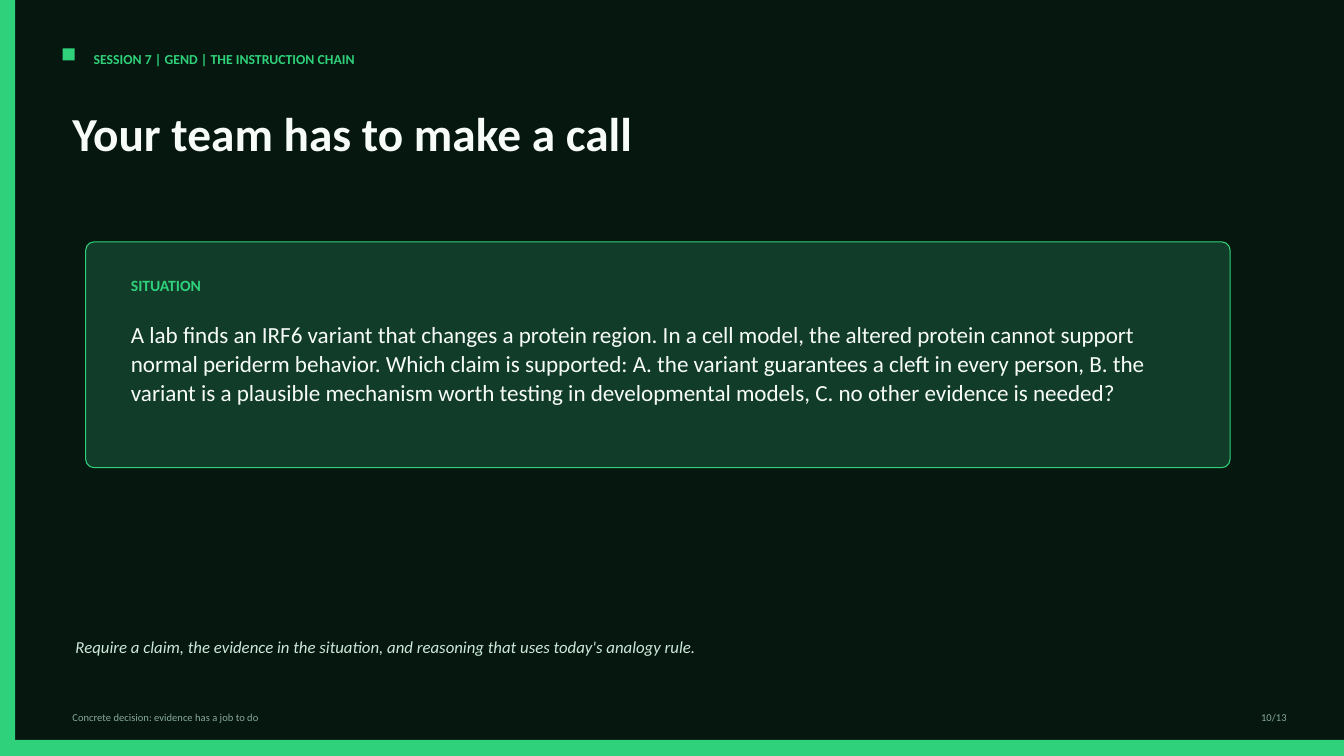
"""Build a dark decision slide with a situation card."""
from pptx import Presentation
from pptx.dml.color import RGBColor
from pptx.enum.shapes import MSO_SHAPE
from pptx.enum.text import PP_ALIGN
from pptx.util import Inches, Pt

BACKGROUND = RGBColor(0x06, 0x17, 0x0F)
GREEN = RGBColor(0x2F, 0xD2, 0x7A)
CARD = RGBColor(0x12, 0x3C, 0x2A)
WHITE = RGBColor(0xF7, 0xFC, 0xF9)
MINT = RGBColor(0xCD, 0xE9, 0xDA)
MUTED = RGBColor(0x87, 0xAB, 0x9A)
FONT = "Calibri"
WIDTH, HEIGHT = 13.33, 7.5


def add_box(slide, box, fill, kind=MSO_SHAPE.RECTANGLE):
    """Add a filled shape without outline or shadow."""
    sp = slide.shapes.add_shape(kind, *map(Inches, box))
    sp.shadow.inherit = False
    sp.fill.solid()
    sp.fill.fore_color.rgb = fill
    sp.line.fill.background()
    return sp


def add_text(slide, box, text, size, color, bold=False, italic=False,
             spacing=None, align=None):
    """Add a wrapped one-paragraph text box."""
    tf = slide.shapes.add_textbox(*map(Inches, box)).text_frame
    tf.word_wrap = True
    p = tf.paragraphs[0]
    p.text = text
    p.alignment = align
    p.line_spacing = spacing
    font = p.runs[0].font
    font.name, font.size = FONT, Pt(size)
    font.bold, font.italic = bold, italic
    font.color.rgb = color


def add_frame(slide, width, height):
    """Paint the background and the left and bottom bars."""
    fill = slide.background.fill
    fill.solid()
    fill.fore_color.rgb = BACKGROUND
    add_box(slide, (0, 0, 0.15, height), GREEN)
    add_box(slide, (0, height - 0.16, width, 0.16), GREEN)


def add_header(slide, x, y, session, title):
    """Add the marker, session label and title."""
    add_box(slide, (x, y + 0.03, 0.12, 0.12), GREEN)
    add_text(slide, (x + 0.21, y, 6.46, 0.25), session, 9.8, GREEN, bold=True)
    add_text(slide, (x, y + 0.59, 11.46, 0.88), title, 33.8, WHITE, bold=True,
             spacing=0.92)


def add_card(slide, box, label, body):
    """Add the rounded card with its label and body text."""
    x, y, w, h = box
    sp = add_box(slide, box, CARD, MSO_SHAPE.ROUNDED_RECTANGLE)
    sp.adjustments[0] = 0.037
    sp.line.color.rgb = GREEN
    sp.line.width = Pt(0.75)
    add_text(slide, (x + 0.35, y + 0.29, 2.71, 0.26), label, 11.2, GREEN, bold=True)
    add_text(slide, (x + 0.35, y + 0.72, w - 0.67, h - 1.01), body, 16.5, WHITE,
             spacing=1.05)


def add_footer(slide, x, y, right, caption, page):
    """Add the caption at the left and the page number at the right."""
    add_text(slide, (x, y, 9.38, 0.19), caption, 7.5, MUTED)
    add_text(slide, (right - 0.83, y, 0.83, 0.19), page, 7.5, MUTED,
             align=PP_ALIGN.RIGHT)


def main():
    """Assemble and save the slide."""
    prs = Presentation()
    prs.slide_width, prs.slide_height = Inches(WIDTH), Inches(HEIGHT)
    s = prs.slides.add_slide(prs.slide_layouts[6])
    add_frame(s, WIDTH, HEIGHT)
    add_header(s, 0.62, 0.45, "SESSION 7 | GEND | THE INSTRUCTION CHAIN",
               "Your team has to make a call")
    add_card(s, (0.85, 2.4, 11.35, 2.24), "SITUATION",
             "A lab finds an IRF6 variant that changes a protein region. "
             "In a cell model, the altered protein cannot support normal "
             "periderm behavior. Which claim is supported: A. the variant "
             "guarantees a cleft in every person, B. the variant is a "
             "plausible mechanism worth testing in developmental models, "
             "C. no other evidence is needed?")
    add_text(s, (0.65, 6.25, 11.25, 0.46),
             "Require a claim, the evidence in the situation, and reasoning "
             "that uses today's analogy rule.", 12, MINT, italic=True, spacing=1.1)
    add_footer(s, 0.62, 7, 12.86, "Concrete decision: evidence has a job to do",
               "10/13")
    prs.save("out.pptx")


if __name__ == "__main__":
    main()
